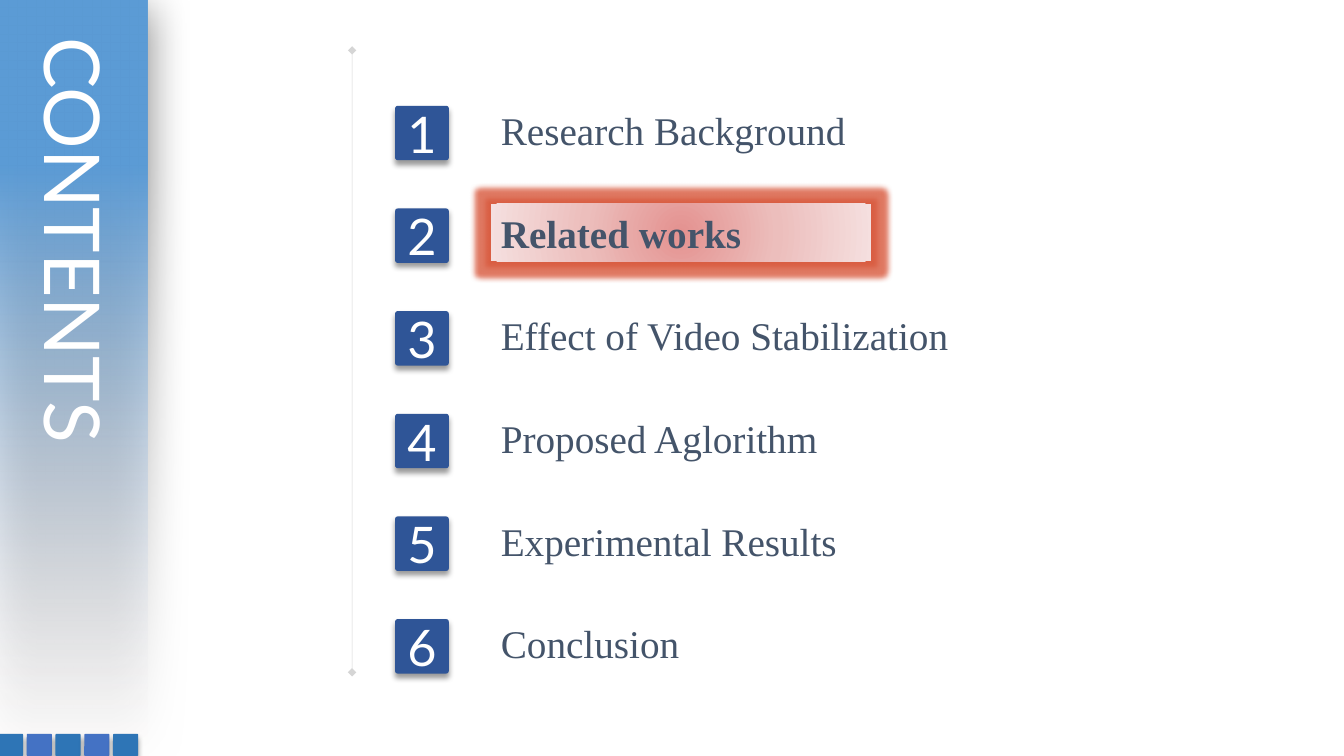
from lxml import etree
from pptx import Presentation, util as u
from pptx.dml.color import RGBColor
from pptx.enum import shapes, text
from pptx.oxml import parse_xml
from pptx.oxml.ns import nsdecls, qn

TOPICS = [  # label, width of its box in percent of the slide
    ("Research Background", 29.7),
    ("Related works", 28.3),
    ("Effect of Video Stabilization", 36.4),
    ("Proposed Aglorithm", 26.6),
    ("Experimental Results", 28.3),
    ("Conclusion", 15.5),
]
CURRENT_TOPIC = 1
FIRST_ROW, ROW_STEP = 14.0, 13.58
TILE_STEP = 2.14


def color(value):
    return RGBColor.from_string(value)


def color_xml(value, opacity):
    return f'<a:srgbClr val="{value}"><a:alpha val="{opacity * 1000}"/></a:srgbClr>'


class ContentsPage:
    """Draws on one page; places and sizes are percentages of the slide."""
    ink, accent, white = "44546A", "2F5597", "FFFFFF"
    heading_font, body_font = "Lato", "Times New Roman"

    def __init__(self, deck):
        self.width, self.height = deck.slide_width, deck.slide_height
        self.page = deck.slides.add_slide(deck.slide_layouts[6])

    def x(self, share):
        return u.Emu(round(self.width * share / 100))

    def y(self, share):
        return u.Emu(round(self.height * share / 100))

    def area(self, left, top, width, height):
        return self.x(left), self.y(top), self.x(width), self.y(height)

    def block(self, place, fill=None, rounded=False):
        kind = shapes.MSO_SHAPE.ROUNDED_RECTANGLE if rounded else shapes.MSO_SHAPE.RECTANGLE
        box = self.page.shapes.add_shape(kind, *self.area(*place))
        if rounded:
            box.adjustments[0] = 0.05
        if fill:
            box.fill.solid()
            box.fill.fore_color.rgb = color(fill)
        box.line.fill.background()
        box.shadow.inherit = False
        return box

    def gradient(self, box, stops, direction):
        """Fill with (position, colour, opacity) stops along the direction element."""
        marks = "".join(f'<a:gs pos="{position * 1000}">{color_xml(value, opacity)}</a:gs>'
                        for position, value, opacity in stops)
        box.fill.background()
        old = box.element.spPr.find(qn("a:noFill"))
        old.getparent().replace(old, parse_xml(
            f'<a:gradFill {nsdecls("a")} rotWithShape="1"><a:gsLst>{marks}</a:gsLst>'
            f'{direction}</a:gradFill>'))

    def effect(self, box, tag, attributes, value, opacity):
        effects = box.element.spPr.find(qn("a:effectLst"))
        effects.append(parse_xml(f'<a:{tag} {nsdecls("a")} {attributes}>'
                                 f'{color_xml(value, opacity)}</a:{tag}>'))

    def shadow(self, box, opacity, blur, distance, angle):
        self.effect(box, "outerShdw",
                    f'blurRad="{u.Pt(blur)}" dist="{u.Pt(distance)}" '
                    f'dir="{angle * 60000}" algn="ctr" rotWithShape="0"', "000000", opacity)

    def label(self, box, words, size, font, ink, bold=None):
        para = box.text_frame.paragraphs[0]
        span = para.add_run()
        span.text = words
        span.font.size, span.font.name, span.font.bold = u.Pt(size), font, bold
        span.font.color.rgb = color(ink)
        return para

    def divider(self, column, top, bottom):
        line = self.page.shapes.add_connector(
            shapes.MSO_CONNECTOR.STRAIGHT, self.x(column), self.y(top),
            self.x(column), self.y(bottom))
        line.line.width = u.Pt(0.25)
        line.line.color.rgb = color("808080")
        stroke = line.element.spPr.find(qn("a:ln"))
        alpha = etree.SubElement(stroke.find(".//" + qn("a:srgbClr")), qn("a:alpha"))
        alpha.set("val", "33000")
        for end in ("a:headEnd", "a:tailEnd"):
            etree.SubElement(stroke, qn(end)).set("type", "diamond")
        etree.SubElement(line.element.spPr, qn("a:effectLst"))

    def sidebar(self):
        bar = self.block((-22.5, 39.87, 55.95, 19.6))
        bar.rotation = 90
        self.gradient(bar, [(0, "FEF2F0", 0), (78, "5B9BD5", 100)],
                      '<a:lin ang="10800000" scaled="0"/>')
        self.shadow(bar, 50, 31, 6, 97)

    def title(self, words):
        box = self.page.shapes.add_textbox(*self.area(0.9, 3.6, 8.48, 65.87))
        box.text_frame.word_wrap = True
        box.element.txBody.find(qn("a:bodyPr")).set("vert", "eaVert")
        box.text_frame.auto_size = text.MSO_AUTO_SIZE.SHAPE_TO_FIT_TEXT
        self.label(box, words, 55, self.heading_font, self.white)

    def tile(self, index):
        fill = "4472C4" if index % 2 else "2E75B6"
        box = self.block((-0.15 + index * TILE_STEP, 97.07, 1.87, 2.93), fill, rounded=True)
        self.shadow(box, 40, 4, 3, 90)

    def badge(self, index):
        box = self.block((29.4, FIRST_ROW + index * ROW_STEP, 4, 7.2),
                         self.accent, rounded=True)
        self.shadow(box, 40, 4, 3, 90)
        box.text_frame.vertical_anchor = text.MSO_ANCHOR.MIDDLE
        para = self.label(box, str(index + 1), 36, self.heading_font, self.white)
        para.alignment = text.PP_ALIGN.CENTER

    def topic(self, index, words, width):
        place = (36.53, FIRST_ROW - 0.6 + index * ROW_STEP, width, 7.6)
        current = index == CURRENT_TOPIC
        if current:
            box = self.block(place)
            self.gradient(box, [(0, "E49290", 100), (50, "ECBEBC", 100), (100, "F5DFDF", 100)],
                          '<a:path path="circle"><a:fillToRect l="50000" t="50000" '
                          'r="50000" b="50000"/></a:path>')
            self.effect(box, "glow", f'rad="{u.Pt(8)}"', "D9583C", 80)
            box.text_frame.vertical_anchor = text.MSO_ANCHOR.TOP
        else:
            box = self.page.shapes.add_textbox(*self.area(*place))
        box.text_frame.word_wrap = current
        box.text_frame.auto_size = text.MSO_AUTO_SIZE.SHAPE_TO_FIT_TEXT
        para = self.label(box, words, 28, self.body_font, self.ink, current or None)
        para.alignment = text.PP_ALIGN.LEFT


def main():
    deck = Presentation()
    deck.slide_width, deck.slide_height = u.Inches(13.33), u.Inches(7.5)
    contents = ContentsPage(deck)
    contents.divider(26.2, 6.67, 88.93)
    contents.sidebar()
    for index in range(5):
        contents.tile(index)
    contents.title("CONTENTS")
    for index, (words, width) in enumerate(TOPICS):
        contents.badge(index)
        contents.topic(index, words, width)
    deck.save("out.pptx")


if __name__ == "__main__":
    main()
